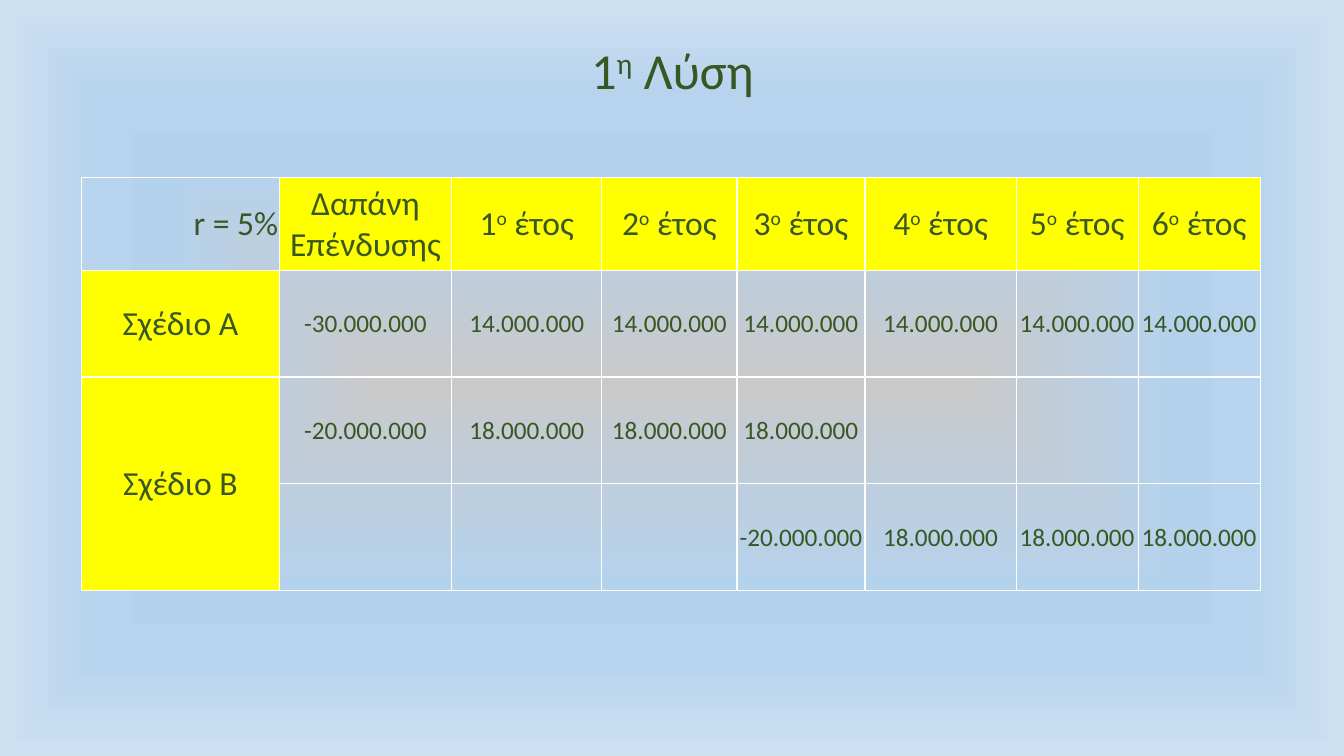
from lxml import etree
from pptx import Presentation
from pptx.dml.color import RGBColor
from pptx.enum.text import MSO_ANCHOR, PP_ALIGN
from pptx.oxml import parse_xml
from pptx.oxml.ns import nsdecls, qn
from pptx.util import Inches, Pt

MID = MSO_ANCHOR.MIDDLE
CENTER, RIGHT = PP_ALIGN.CENTER, PP_ALIGN.RIGHT
GREEN = RGBColor(0x38, 0x57, 0x23)
YELLOW = RGBColor(0xFF, 0xFF, 0x00)
WHITE = RGBColor(0xFF, 0xFF, 0xFF)

# Content: a tuple holds base text, superscript, base text
TITLE = ("1", "η", " Λύση")
HEAD = ["r = 5%", "Δαπάνη Επένδυσης"]
HEAD += [(str(year), "ο", " έτος") for year in range(1, 7)]
COST, GAIN_A, GAIN_B = "-20.000.000", "14.000.000", "18.000.000"
ROWS = [
    HEAD,
    ["Σχέδιο Α", "-30.000.000"] + [GAIN_A] * 6,
    ["Σχέδιο Β", COST] + [GAIN_B] * 3 + [""] * 3,
    [""] * 4 + [COST] + [GAIN_B] * 3,
]
WIDTHS = [1.96, 1.71, 1.49, 1.34, 1.27, 1.5, 1.21, 1.21]
HEIGHTS = [0.92, 1.06, 1.06, 1.06]
STOPS = [(0, "C9C9C9"), (36, "BBCFE1"), (45, "B8D1E7"), (54, "B5D2EC"),
         (65, "B5D2EC"), (75, "B7D3ED"), (100, "CEE1F2")]
INSETS = {"margin_left": Inches(0.01), "margin_right": Inches(0.01),
          "margin_top": Inches(0.01), "margin_bottom": 0,
          "vertical_anchor": MID}


def write(par, parts, size, align=CENTER):
    """Fill a paragraph; the second part of a tuple is raised."""
    par.alignment = align
    style = {"name": "Calibri", "size": Pt(size), "bold": False}
    for i, text in enumerate([parts] if isinstance(parts, str) else parts):
        run = par.add_run()
        run.text = text
        for key, val in style.items():
            setattr(run.font, key, val)
        run.font.color.rgb = GREEN
        if i == 1:
            run.font._element.set("baseline", "30000")


def edge(cell):
    """Draw a thin white line on all four sides of a cell."""
    props = cell._tc.get_or_add_tcPr()
    for i, side in enumerate("LRTB"):
        props.insert(i, parse_xml(
            f'<a:ln{side} {nsdecls("a")} w="12700"><a:solidFill>'
            f'<a:srgbClr val="{WHITE}"/></a:solidFill></a:ln{side}>'))


def shade(slide):
    """Give the slide a gradient that runs out from its centre."""
    fill = slide.background.fill
    fill.gradient()
    grad = slide._element.find(".//" + qn("a:gradFill"))
    for child in list(grad):
        grad.remove(child)
    stops = etree.SubElement(grad, qn("a:gsLst"))
    for pos, color in STOPS:
        stop = etree.SubElement(stops, qn("a:gs"), pos=str(pos * 1000))
        etree.SubElement(stop, qn("a:srgbClr"), val=color)
    form = etree.SubElement(grad, qn("a:path"), path="shape")
    half = dict.fromkeys("ltrb", "50000")
    etree.SubElement(form, qn("a:fillToRect"), **half)


def main():
    prs = Presentation()
    prs.slide_width, prs.slide_height = Inches(13.33), Inches(7.5)
    slide = prs.slides.add_slide(prs.slide_layouts[5])
    shade(slide)

    # Title
    title = slide.shapes.title
    title.left, title.top = Inches(0.92), 0
    title.width, title.height = Inches(11.5), Inches(1.45)
    title.text_frame.vertical_anchor = MID
    par = title.text_frame.paragraphs[0]
    par.line_spacing = 0.9
    write(par, TITLE, 36)

    # Table
    table = slide.shapes.add_table(
        len(ROWS), len(WIDTHS), Inches(0.81), Inches(1.76),
        Inches(sum(WIDTHS)), Inches(sum(HEIGHTS))).table
    table.first_row = table.horz_banding = False
    for col, width in zip(table.columns, WIDTHS):
        col.width = Inches(width)
    for row, height in zip(table.rows, HEIGHTS):
        row.height = Inches(height)
    for r, row in enumerate(ROWS):
        for c, text in enumerate(row):
            cell = table.cell(r, c)
            label = r == 0 or c == 0
            for key, val in INSETS.items():
                setattr(cell, key, val)
            if label and (r or c):
                cell.fill.solid()
                cell.fill.fore_color.rgb = YELLOW
            else:
                cell.fill.background()
            edge(cell)
            if text:
                write(cell.text_frame.paragraphs[0], text,
                      24 if label else 18, CENTER if r or c else RIGHT)
    table.cell(2, 0).merge(table.cell(3, 0))

    prs.save("out.pptx")


if __name__ == "__main__":
    main()
